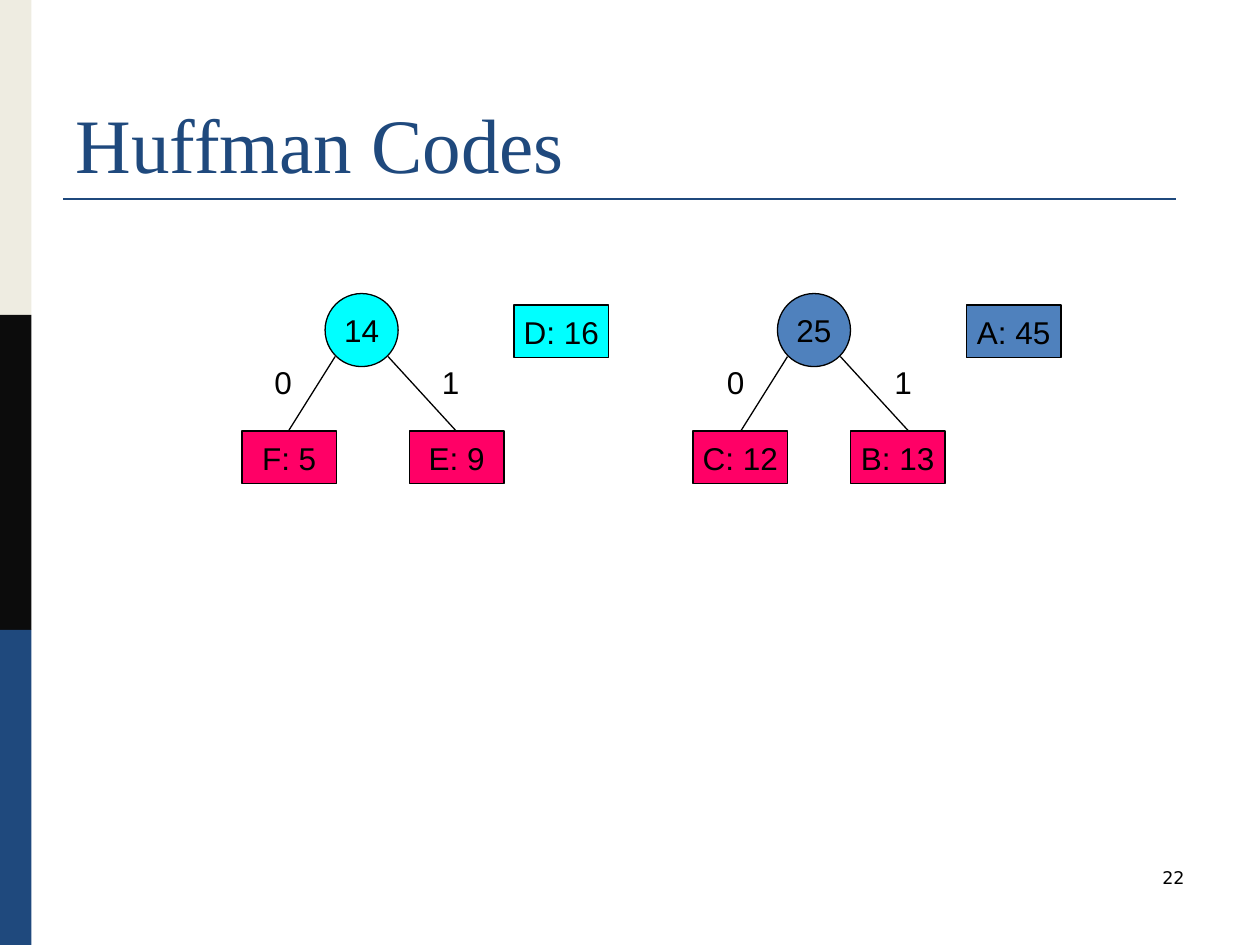
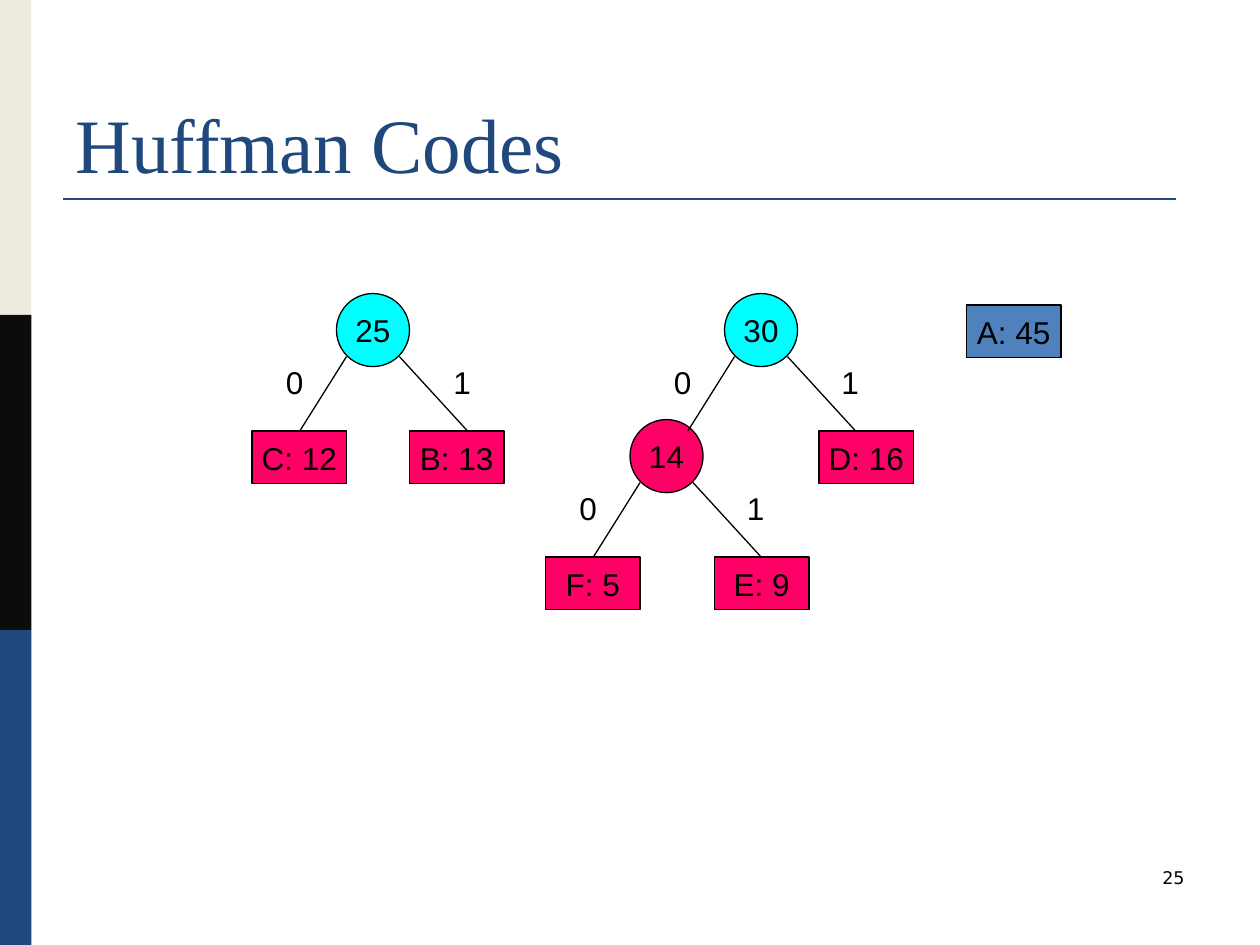
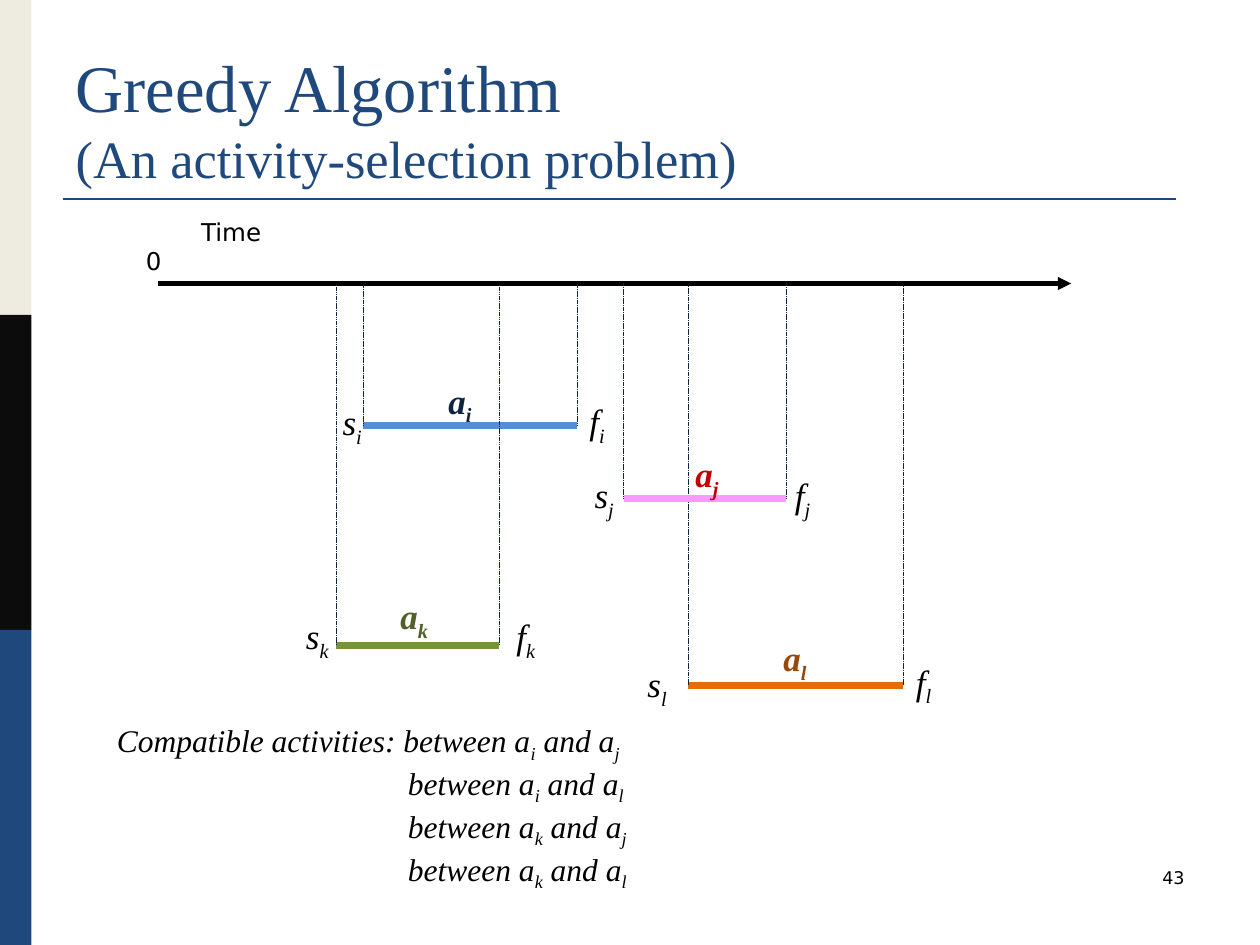
from lxml.etree import SubElement
from pptx import Presentation
from pptx.dml.color import RGBColor
from pptx.enum.dml import MSO_LINE
from pptx.enum.shapes import MSO_CONNECTOR, MSO_SHAPE
from pptx.enum.text import MSO_ANCHOR, PP_ALIGN
from pptx.oxml.ns import qn
from pptx.util import Inches, Pt

BLACK = RGBColor(0x00, 0x00, 0x00)
NAVY = RGBColor(0x1F, 0x49, 0x7D)
CREAM = RGBColor(0xEE, 0xEC, 0xE1)
CHARCOAL = RGBColor(0x0C, 0x0C, 0x0C)
PINK = RGBColor(0xFF, 0x00, 0x66)
CYAN = RGBColor(0x00, 0xFF, 0xFF)
STEEL = RGBColor(0x4F, 0x81, 0xBD)
INK = RGBColor(0x0F, 0x24, 0x3E)
SKY = RGBColor(0x55, 0x8E, 0xD5)
ORCHID = RGBColor(0xFF, 0x99, 0xFF)
RED = RGBColor(0xC0, 0x00, 0x00)
GREEN = RGBColor(0x77, 0x93, 0x3C)
DARK_GREEN = RGBColor(0x4F, 0x62, 0x28)
ORANGE = RGBColor(0xE4, 0x6C, 0x0A)
BROWN = RGBColor(0x98, 0x48, 0x07)

SERIF, SANS, UI = "Times New Roman", "Arial", "DejaVu Sans"

ROOT_Y = 2.33
LEVEL = 1.0
AXIS_Y = 2.25


def style(p, name, size, color=BLACK, bold=False, italic=False, align=PP_ALIGN.LEFT):
    p.alignment = align
    f = p.font
    f.name, f.size, f.bold, f.italic = name, Pt(size), bold, italic
    f.color.rgb = color


def add_box(slide, kind, x, y, w, h, fill, outline=None):
    sp = slide.shapes.add_shape(kind, Inches(x), Inches(y), Inches(w), Inches(h))
    sp.shadow.inherit = False
    sp.fill.solid()
    sp.fill.fore_color.rgb = fill
    if outline is None:
        sp.line.fill.background()
    else:
        sp.line.color.rgb = outline
        sp.line.width = Pt(0.75)
    return sp


def add_line(slide, x1, y1, x2, y2, color=BLACK, width=0.75, dash=None, arrow=False):
    line = slide.shapes.add_connector(
        MSO_CONNECTOR.STRAIGHT, Inches(x1), Inches(y1), Inches(x2), Inches(y2))
    line.line.color.rgb = color
    line.line.width = Pt(width)
    if dash is not None:
        line.line.dash_style = dash
    sp_pr = line.element.spPr
    if arrow:
        SubElement(sp_pr.find(qn("a:ln")), qn("a:tailEnd"), type="triangle")
    SubElement(sp_pr, qn("a:effectLst"))
    return line


def add_text_frame(slide, x, y, w, h):
    box = slide.shapes.add_textbox(Inches(x), Inches(y), Inches(w), Inches(h))
    box.text_frame.word_wrap = True
    return box.text_frame


def add_text(slide, text, x, y, w, h, *font, **options):
    p = add_text_frame(slide, x, y, w, h).paragraphs[0]
    p.text = text
    style(p, *font, **options)


def fill_subscripted(p, text):
    """Add runs to p; the letter after each underscore is a subscript."""
    first, *rest = text.split("_")
    p.add_run().text = first
    for part in rest:
        r = p.add_run()
        r.text = part[0]
        r._r.get_or_add_rPr().set("baseline", "-25000")
        if part[1:]:
            p.add_run().text = part[1:]


def add_symbol(slide, text, x, y, w=0.38, color=BLACK, bold=False):
    p = add_text_frame(slide, x, y, w, 0.38).paragraphs[0]
    fill_subscripted(p, text)
    style(p, SERIF, 20, color, bold=bold, italic=True)


def indent(p, inches):
    pPr = p._p.get_or_add_pPr()
    pPr.set("marL", str(Inches(inches)))
    pPr.set("indent", "0")


def set_up_layout(layout, slide):
    """Draw the bands and the title rule, and move them behind the layout's title."""
    frame = [add_box(slide, MSO_SHAPE.RECTANGLE, 0, 2.5 * i, 0.25, 2.5, color)
             for i, color in enumerate((CREAM, CHARCOAL, NAVY))]
    frame.append(add_line(slide, 0.5, 1.58, 9.33, 1.58, NAVY, 1.5))
    for i, sp in enumerate(frame):
        sp.element.xpath("./*/p:cNvPr")[0].set("id", str(20 + i))
        layout.shapes.element.insert(2 + i, sp.element)
    title = layout.placeholders[0]
    title.left, title.top = Inches(0.5), Inches(0.3)
    title.width, title.height = Inches(9), Inches(1.25)
    title.text_frame.vertical_anchor = MSO_ANCHOR.BOTTOM


def add_heading(slide, number, title, size, subtitle=None):
    p = slide.shapes.title.text_frame.paragraphs[0]
    p.add_run().text = title
    style(p, SERIF, size, NAVY)
    if subtitle:
        p.add_line_break()
        r = p.add_run()
        r.text = subtitle
        r.font.size = Pt(30)
    add_text(slide, str(number), 7.17, 6.83, 2.33, 0.5, UI, 10, align=PP_ALIGN.RIGHT)


def add_node(slide, kind, text, x, y, w, h, fill):
    sp = add_box(slide, kind, x, y, w, h, fill, BLACK)
    tf = sp.text_frame
    tf.word_wrap = False
    tf.vertical_anchor = MSO_ANCHOR.MIDDLE
    p = tf.paragraphs[0]
    p.text = text
    style(p, SANS, 18, align=PP_ALIGN.CENTER)


def add_leaf(slide, text, x, level=0, fill=PINK):
    add_node(slide, MSO_SHAPE.RECTANGLE, text, x, ROOT_Y + 0.09 + level * LEVEL,
             0.75, 0.42, fill)


def add_branch(slide, weight, x, level=0, fill=CYAN):
    """Add an inner node with its two edges and their 0 and 1 labels."""
    y = ROOT_Y + level * LEVEL
    add_node(slide, MSO_SHAPE.OVAL, weight, x, y, 0.58, 0.58, fill)
    add_line(slide, x + 0.08, y + 0.5, x - 0.29, y + 1.09)
    add_line(slide, x + 0.5, y + 0.5, x + 1.04, y + 1.09)
    add_text(slide, "0", x - 0.5, y + 0.5, 0.42, 0.4, SANS, 18)
    add_text(slide, "1", x + 0.83, y + 0.5, 0.33, 0.4, SANS, 18)


def add_two_trees(slide):
    add_heading(slide, 22, "Huffman Codes", 44)
    for text, x in (("C: 12", 5.5), ("B: 13", 6.75), ("F: 5", 1.92), ("E: 9", 3.25)):
        add_leaf(slide, text, x, level=1)
    add_leaf(slide, "D: 16", 4.08, fill=CYAN)
    add_leaf(slide, "A: 45", 7.67, fill=STEEL)
    add_branch(slide, "14", 2.58)
    add_branch(slide, "25", 6.17, fill=STEEL)


def add_merged_trees(slide):
    add_heading(slide, 25, "Huffman Codes", 44)
    for text, x, level in (("C: 12", 2, 1), ("B: 13", 3.25, 1), ("D: 16", 6.5, 1),
                           ("F: 5", 4.33, 2), ("E: 9", 5.67, 2)):
        add_leaf(slide, text, x, level)
    add_leaf(slide, "A: 45", 7.67, fill=STEEL)
    add_branch(slide, "14", 5, level=1, fill=PINK)
    add_branch(slide, "25", 2.67)
    add_branch(slide, "30", 5.75)


def add_time_axis(slide):
    add_line(slide, 1.25, AXIS_Y, 8.5, AXIS_Y, width=2.5, arrow=True)
    tf = add_text_frame(slide, 1, 1.67, 1.67, 0.57)
    p = tf.paragraphs[0]
    p.text = "Time"
    style(p, UI, 14, align=PP_ALIGN.CENTER)
    p = tf.add_paragraph()
    p.text = "0"
    style(p, UI, 14)
    indent(p, 0.06)


def add_activity(slide, key, start, finish, y, bar, ink, name_at, start_at, finish_at):
    add_line(slide, start, y, finish, y, bar, 4)
    for x in (start, finish):
        add_line(slide, x, y, x, AXIS_Y, INK, 0.25, MSO_LINE.SQUARE_DOT)
    add_symbol(slide, f"s_{key}", *start_at)
    add_symbol(slide, f"f_{key}", *finish_at)
    add_symbol(slide, f"a_{key}", *name_at, w=0.54, color=ink, bold=True)


def add_compatible_pairs(slide):
    tf = add_text_frame(slide, 0.83, 5.67, 6.33, 1.31)
    for i, (first, second) in enumerate(("ij", "il", "kj", "kl")):
        p = tf.add_paragraph() if i else tf.paragraphs[0]
        lead = "" if i else "Compatible activities: "
        fill_subscripted(p, f"{lead}between a_{first} and a_{second}")
        style(p, SERIF, 18, italic=True)
        if i:
            indent(p, 2.31)


def add_activity_selection(slide):
    add_heading(slide, 43, "Greedy Algorithm", 38, "(An activity-selection problem)")
    add_time_axis(slide)
    add_activity(slide, "l", 5.46, 7.17, 5.44, ORANGE, BROWN,
                 (6.12, 5), (5.04, 5.21), (7.17, 5.19))
    add_activity(slide, "i", 2.88, 4.58, 3.38, SKY, INK,
                 (3.46, 2.96), (2.62, 3.13), (4.58, 3.12))
    add_activity(slide, "j", 4.95, 6.24, 3.96, ORCHID, RED,
                 (5.42, 3.54), (4.62, 3.71), (6.21, 3.71))
    add_activity(slide, "k", 2.67, 3.96, 5.12, GREEN, DARK_GREEN,
                 (3.08, 4.67), (2.33, 4.83, 0.5), (4, 4.83))
    add_compatible_pairs(slide)


def main():
    prs = Presentation()
    prs.slide_width, prs.slide_height = Inches(10), Inches(7.5)
    layout = prs.slide_layouts[5]
    slides = [prs.slides.add_slide(layout) for _ in range(3)]
    set_up_layout(layout, slides[0])
    for slide, build in zip(slides, (add_two_trees, add_merged_trees,
                                     add_activity_selection)):
        build(slide)
    prs.save("out.pptx")


if __name__ == "__main__":
    main()
